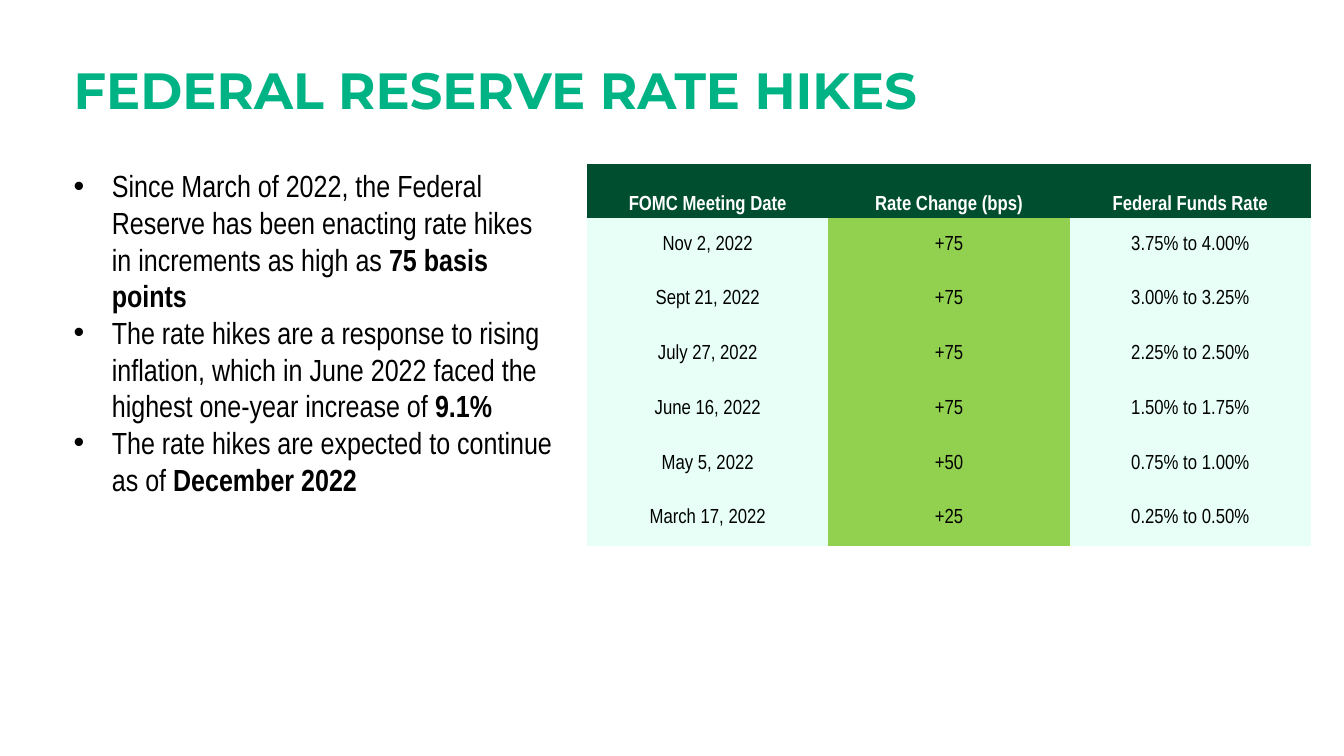
"""Build a slide on Federal Reserve rate hikes with a bullet list and a table."""
from typing import Any, NamedTuple

from lxml import etree
from pptx import Presentation
from pptx.dml.color import RGBColor
from pptx.enum.text import MSO_ANCHOR, MSO_AUTO_SIZE, PP_ALIGN
from pptx.oxml.ns import qn
from pptx.util import Emu, Pt

LEFT, CENTER = PP_ALIGN.LEFT, PP_ALIGN.CENTER
TOP, MIDDLE, BOTTOM = MSO_ANCHOR.TOP, MSO_ANCHOR.MIDDLE, MSO_ANCHOR.BOTTOM
NO_AUTOFIT = MSO_AUTO_SIZE.NONE

EMU_PER_PX = 9525
SLIDE_WIDTH, SLIDE_HEIGHT = 2111, 1188
BULLET_INDENT = 60
COLUMN_WIDTH, HEADER_HEIGHT, ROW_HEIGHT = 379, 84, 86
PLAIN_TABLE_STYLE = "{2D5ABB26-0587-4C30-8999-92F81FD0307C}"
BLACK, WHITE, GREEN = "000000", "FFFFFF", "00B385"
DARK_GREEN, LIME, MINT = "004E30", "92D050", "E7FFF6"


class Box(NamedTuple):
    """Position and size in px."""
    left: int
    top: int
    width: int
    height: int


class TextStyle(NamedTuple):
    """Look of a run of text."""
    name: str
    size: int
    color: str
    bold: bool = False


class Bullet(NamedTuple):
    """List item that ends in bold words."""
    lead: str
    emphasis: str


class RateHike(NamedTuple):
    """One row of the rate table."""
    date: str
    change: str
    funds_rate: str


TITLE_BOX = Box(106, 79, 1900, 113)
BODY_BOX = Box(106, 258, 775, 600)
TITLE_STYLE = TextStyle("Montserrat", 60, GREEN, True)
BODY_STYLE = TextStyle("Arial Narrow", 36, BLACK)
HEADER_STYLE = TextStyle("Arial Narrow", 24, WHITE, True)
CELL_STYLE = TextStyle("Arial Narrow", 24, BLACK)

BULLETS = [
    Bullet("Since March of 2022, the Federal Reserve has been enacting rate hikes "
           "in increments as high as ", "75 basis points"),
    Bullet("The rate hikes are a response to rising inflation, which in June 2022 "
           "faced the highest one-year increase of ", "9.1%"),
    Bullet("The rate hikes are expected to continue as of ", "December 2022"),
]
HEADER = RateHike("FOMC Meeting Date", "Rate Change (bps)", "Federal Funds Rate")
RATE_HIKES = [
    RateHike("Nov 2, 2022", "+75", "3.75% to 4.00%"),
    RateHike("Sept 21, 2022", "+75", "3.00% to 3.25%"),
    RateHike("July 27, 2022", "+75", "2.25% to 2.50%"),
    RateHike("June 16, 2022", "+75", "1.50% to 1.75%"),
    RateHike("May 5, 2022", "+50", "0.75% to 1.00%"),
    RateHike("March 17, 2022", "+25", "0.25% to 0.50%"),
]
COLUMN_FILLS = RateHike(MINT, LIME, MINT)


def px(length: int) -> Emu:
    """Turn px into EMU."""
    return Emu(length * EMU_PER_PX)


def rgb(color: str) -> RGBColor:
    """Turn a hex string into a colour."""
    return RGBColor.from_string(color)


def set_format(target: Any, values: dict[str, Any]) -> None:
    """Set each named attribute of the target."""
    for name, value in values.items():
        setattr(target, name, value)


def add_run(paragraph: Any, text: str, style: TextStyle) -> None:
    """Append styled text to a paragraph."""
    run = paragraph.add_run()
    run.text = text
    set_format(run.font, {"name": style.name, "size": Pt(style.size), "bold": style.bold})
    run.font.color.rgb = rgb(style.color)


def place(shape: Any, box: Box, anchor: Any) -> None:
    """Move a placeholder and fix its text frame."""
    set_format(shape, {name: px(length) for name, length in box._asdict().items()})
    set_format(shape.text_frame, {
        "word_wrap": True, "auto_size": NO_AUTOFIT, "vertical_anchor": anchor})


def add_bullet_mark(paragraph: Any) -> None:
    """Give a paragraph a round bullet with a hanging indent."""
    properties = paragraph._p.get_or_add_pPr()
    properties.set("marL", str(px(BULLET_INDENT)))
    properties.set("indent", str(-px(BULLET_INDENT)))
    etree.SubElement(properties, qn("a:buFont"), typeface="Arial")
    etree.SubElement(properties, qn("a:buChar"), char="•")


def fill_title(shape: Any) -> None:
    """Write the slide title."""
    place(shape, TITLE_BOX, BOTTOM)
    paragraph = shape.text_frame.paragraphs[0]
    set_format(paragraph, {"alignment": LEFT, "line_spacing": 0.8})
    add_run(paragraph, "FEDERAL RESERVE RATE HIKES", TITLE_STYLE)


def fill_body(shape: Any) -> None:
    """Write the bullet list."""
    place(shape, BODY_BOX, TOP)
    frame = shape.text_frame
    for index, bullet in enumerate(BULLETS):
        paragraph = frame.add_paragraph() if index else frame.paragraphs[0]
        add_bullet_mark(paragraph)
        set_format(paragraph, {"alignment": LEFT, "space_before": Pt(0)})
        add_run(paragraph, bullet.lead, BODY_STYLE)
        add_run(paragraph, bullet.emphasis, BODY_STYLE._replace(bold=True))


def fill_cell(cell: Any, text: str, fill: str, style: TextStyle, anchor: Any) -> None:
    """Write and colour one table cell."""
    cell.fill.solid()
    cell.fill.fore_color.rgb = rgb(fill)
    cell.vertical_anchor = anchor
    paragraph = cell.text_frame.paragraphs[0]
    paragraph.alignment = CENTER
    add_run(paragraph, text, style)


def add_rate_table(slide: Any) -> None:
    """Add the table of rate changes."""
    rows = [HEADER, *RATE_HIKES]
    height = HEADER_HEIGHT + ROW_HEIGHT * len(RATE_HIKES)
    table = slide.shapes.add_table(
        len(rows), len(HEADER), px(922), px(258),
        px(COLUMN_WIDTH * len(HEADER)), px(height)).table
    set_format(table, {"first_row": False, "horz_banding": False})
    table._tbl.tblPr.find(qn("a:tableStyleId")).text = PLAIN_TABLE_STYLE
    for column in table.columns:
        column.width = px(COLUMN_WIDTH)
    for row_index, values in enumerate(rows):
        is_header = row_index == 0
        table.rows[row_index].height = px(HEADER_HEIGHT if is_header else ROW_HEIGHT)
        style, anchor = (HEADER_STYLE, BOTTOM) if is_header else (CELL_STYLE, MIDDLE)
        for column_index, text in enumerate(values):
            fill = DARK_GREEN if is_header else COLUMN_FILLS[column_index]
            fill_cell(table.cell(row_index, column_index), text, fill, style, anchor)


def main() -> None:
    """Build and save the presentation."""
    presentation = Presentation()
    set_format(presentation, {
        "slide_width": px(SLIDE_WIDTH), "slide_height": px(SLIDE_HEIGHT)})
    slide = presentation.slides.add_slide(presentation.slide_layouts[0])
    fill_title(slide.shapes.title)
    fill_body(slide.placeholders[1])
    add_rate_table(slide)
    presentation.save("out.pptx")


if __name__ == "__main__":
    main()
